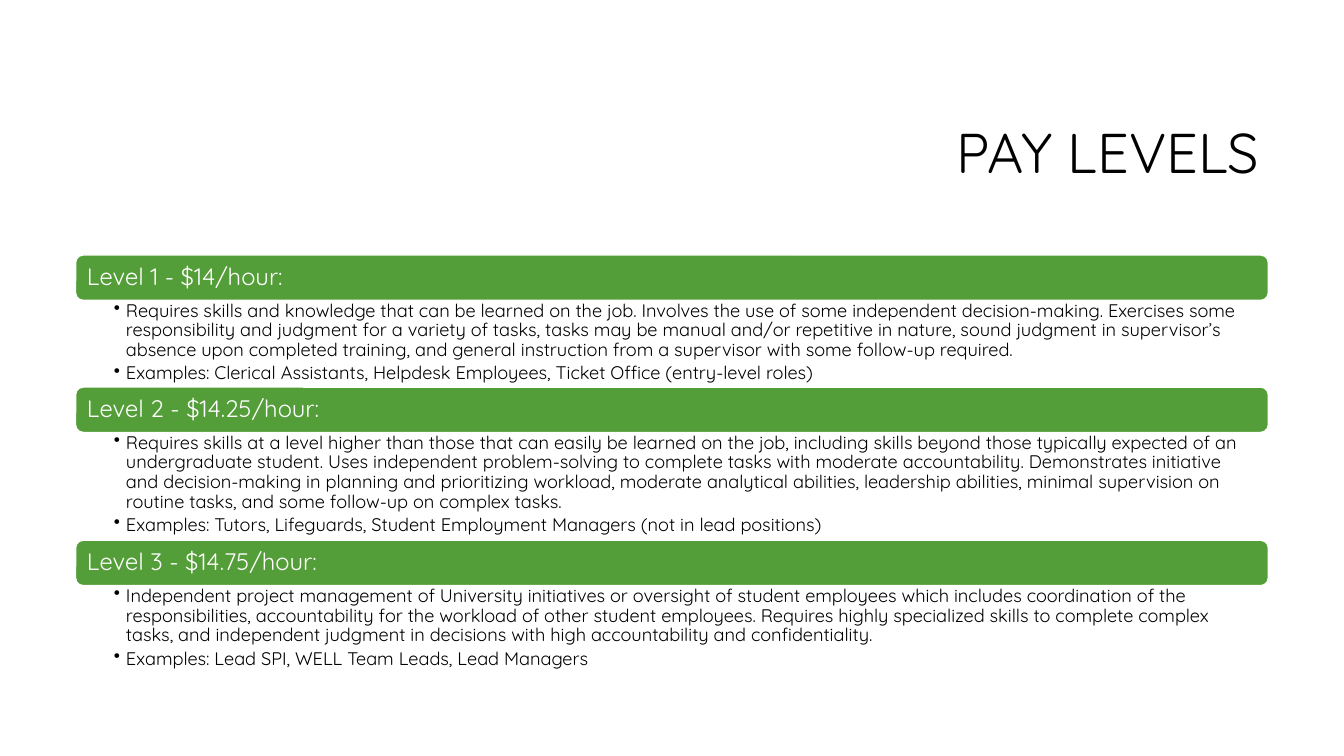
from pptx import Presentation
from pptx.dml.color import RGBColor
from pptx.enum.shapes import MSO_SHAPE
from pptx.enum.text import MSO_ANCHOR, PP_ALIGN
from pptx.oxml.ns import qn
from pptx.util import Inches, Pt

LEFT, WIDTH = 0.75, 11.83
FIRST_TOP, BAR_HEIGHT, BAR_STEP = 2.53, 0.45, 0.44

LEVELS = [
    ("Level 1 - $14/hour:", 0.87, [
        "Requires skills and knowledge that can be learned on the job. Involves the use of "
        "some independent decision-making. Exercises some responsibility and judgment for a "
        "variety of tasks, tasks may be manual and/or repetitive in nature, sound judgment in "
        "supervisor’s absence upon completed training, and general instruction from a "
        "supervisor with some follow-up required.",
        "Examples: Clerical Assistants, Helpdesk Employees, Ticket Office (entry-level roles)",
    ]),
    ("Level 2 - $14.25/hour:", 1.08, [
        "Requires skills at a level higher than those that can easily be learned on the job, "
        "including skills beyond those typically expected of an undergraduate student. Uses "
        "independent problem-solving to complete tasks with moderate accountability. "
        "Demonstrates initiative and decision-making in planning and prioritizing workload, "
        "moderate analytical abilities, leadership abilities, minimal supervision on routine "
        "tasks, and some follow-up on complex tasks.",
        "Examples: Tutors, Lifeguards, Student Employment Managers (not in lead positions)",
    ]),
    ("Level 3 - $14.75/hour:", 0.87, [
        "Independent project management of University initiatives or oversight of student "
        "employees which includes coordination of the responsibilities, accountability for the "
        "workload of other student employees. Requires highly specialized skills to complete "
        "complex tasks, and independent judgment in decisions with high accountability and "
        "confidentiality.",
        "Examples: Lead SPI, WELL Team Leads, Lead Managers",
    ]),
]


def color(hex_value):
    return RGBColor.from_string(hex_value)


def set_attrs(obj, values):
    for name, value in values.items():
        setattr(obj, name, value)


def add_bullet(p, indent):
    """Give the paragraph a bullet with a hanging indent in inches."""
    pPr = p._p.get_or_add_pPr()
    pPr.set("marL", str(Inches(indent)))
    pPr.set("indent", str(-Inches(indent)))
    pPr.append(pPr.makeelement(qn("a:buChar"), {"char": "•"}))


class SlideBuilder:
    FONT = "Quicksand"
    GREEN, WHITE, BLACK = "549E39", "FFFFFF", "000000"

    def __init__(self, slide):
        self.s = slide

    def frame(self, tf, anchor, margins):
        sides = ("margin_left", "margin_top", "margin_right", "margin_bottom")
        set_attrs(tf, {"word_wrap": True, "vertical_anchor": anchor})
        set_attrs(tf, {side: Inches(m) for side, m in zip(sides, margins)})

    def add_text(self, p, text, size, hex_value, align=PP_ALIGN.LEFT, after=0):
        set_attrs(p, {"alignment": align, "line_spacing": 0.9,
                      "space_before": Pt(0), "space_after": Pt(after)})
        r = p.add_run()
        r.text = text
        set_attrs(r.font, {"name": self.FONT, "size": Pt(size)})
        r.font.color.rgb = color(hex_value)

    def title(self, text, left, top, width, height):
        sp = self.s.shapes.title
        set_attrs(sp, {"left": Inches(left), "top": Inches(top),
                       "width": Inches(width), "height": Inches(height)})
        self.frame(sp.text_frame, MSO_ANCHOR.MIDDLE, (0.1, 0.05, 0.1, 0.05))
        self.add_text(sp.text_frame.paragraphs[0], text, 40, self.BLACK, PP_ALIGN.RIGHT)

    def bar(self, text, top):
        sp = self.s.shapes.add_shape(MSO_SHAPE.ROUNDED_RECTANGLE, Inches(LEFT), Inches(top),
                                     Inches(WIDTH), Inches(BAR_HEIGHT))
        sp.shadow.inherit = False
        sp.fill.solid()
        sp.fill.fore_color.rgb = color(self.GREEN)
        sp.line.color.rgb = color(self.WHITE)
        sp.line.width = Pt(1)
        self.frame(sp.text_frame, MSO_ANCHOR.MIDDLE, (0.09, 0.07, 0.09, 0.07))
        self.add_text(sp.text_frame.paragraphs[0], text, 17, self.WHITE)

    def bullets(self, items, top, height):
        sp = self.s.shapes.add_textbox(Inches(LEFT), Inches(top), Inches(WIDTH), Inches(height))
        tf = sp.text_frame
        self.frame(tf, MSO_ANCHOR.TOP, (0.38, 0.02, 0.13, 0.02))
        for i, item in enumerate(items):
            p = tf.add_paragraph() if i else tf.paragraphs[0]
            add_bullet(p, 0.12)
            self.add_text(p, item, 13, self.BLACK, after=2.6)


def main():
    prs = Presentation()
    set_attrs(prs, {"slide_width": Inches(13.33), "slide_height": Inches(7.5)})
    builder = SlideBuilder(prs.slides.add_slide(prs.slide_layouts[5]))
    builder.title("PAY LEVELS", 3.17, 0.84, 9.42, 1.41)
    top = FIRST_TOP
    for heading, list_height, items in LEVELS:
        builder.bar(heading, top)
        builder.bullets(items, top + BAR_STEP, list_height)
        top += BAR_STEP + list_height
    prs.save("out.pptx")


if __name__ == "__main__":
    main()
